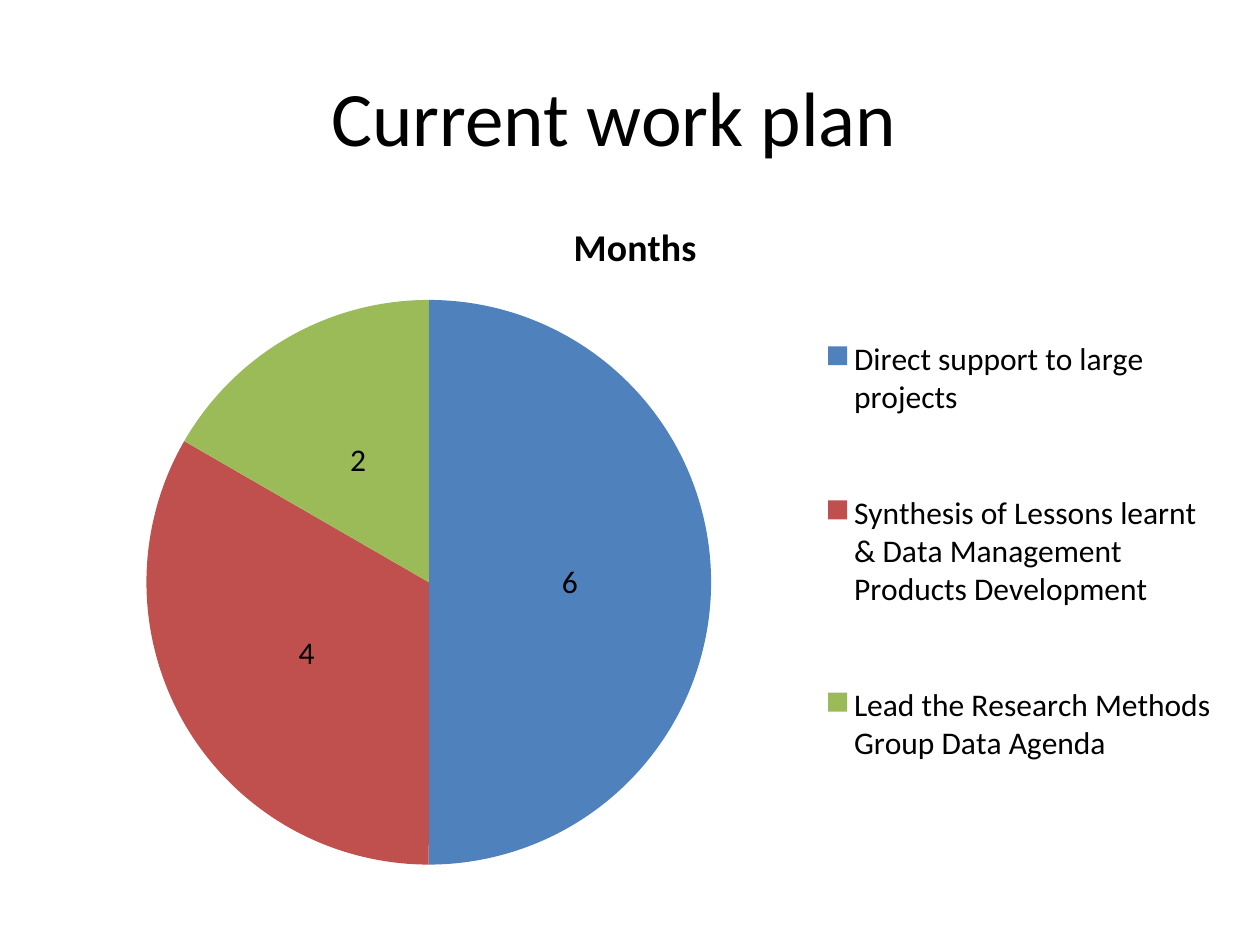
from lxml import etree
from pptx import Presentation, util as u
from pptx.chart.data import CategoryChartData
from pptx.dml.color import RGBColor
from pptx.enum import chart as ch, text
from pptx.oxml import parse_xml
from pptx.oxml.ns import nsdecls, qn

FONT = "Calibri"
BLACK = RGBColor(0x00, 0x00, 0x00)
BLUE = RGBColor(0x4F, 0x81, 0xBD)
RED = RGBColor(0xC0, 0x50, 0x4D)
GREEN = RGBColor(0x9B, 0xBB, 0x59)
COLUMNS, ROWS = 120, 90

WORK_PLAN = [
    ("Direct support to large projects", 6, BLUE),
    ("Synthesis of Lessons learnt & Data Management Products Development", 4, RED),
    ("Lead the Research Methods Group Data Agenda", 2, GREEN),
]


def set_font(font, size, bold=False):
    """Apply the slide's typeface and text colour at the given size."""
    font.name, font.size, font.bold = FONT, u.Pt(size), bold
    font.color.rgb = BLACK


def grid_box(prs, left, top, width, height):
    """Turn grid columns and rows into a box in EMU."""
    col, row = prs.slide_width / COLUMNS, prs.slide_height / ROWS
    return int(left * col), int(top * row), int(width * col), int(height * row)


def set_layout(parent, after, settings, percents):
    """Give a chart part a manual layout in per cent of the chart's size."""
    for old in parent.findall(qn("c:layout")):
        parent.remove(old)
    layout = parse_xml(f"<c:layout {nsdecls('c')}><c:manualLayout/></c:layout>")
    settings = settings + [("xMode", "edge"), ("yMode", "edge")]
    settings += [(tag, share / 100) for tag, share in zip("xywh", percents)]
    for tag, val in settings:
        etree.SubElement(layout[0], qn(f"c:{tag}")).set("val", str(val))
    parent.insert(after, layout)


def add_title(s, box, title):
    """Place and format the slide's title placeholder."""
    sp = s.shapes.title
    sp.left, sp.top, sp.width, sp.height = box
    tf = sp.text_frame
    tf.text = title
    tf.word_wrap = True
    tf.vertical_anchor = text.MSO_ANCHOR.MIDDLE
    p = tf.paragraphs[0]
    p.alignment = text.PP_ALIGN.CENTER
    set_font(p.font, 44)


def add_pie(s, box, name, rows):
    """Add the pie chart with its title, value labels and legend."""
    labels, values, colors = zip(*rows)
    data = CategoryChartData(number_format="General")
    data.categories = labels
    data.add_series(name, values)
    chart = s.shapes.add_chart(ch.XL_CHART_TYPE.PIE, *box, data).chart
    set_font(chart.font, 18)

    chart.has_title = True
    chart.chart_title.include_in_layout = False
    tf = chart.chart_title.text_frame
    tf.text = name
    set_font(tf.paragraphs[0].font, 21.6, bold=True)

    plot = chart.plots[0]
    plot.vary_by_categories = True
    for i, color in enumerate(colors):
        fill = plot.series[0].points[i].format.fill
        fill.solid()
        fill.fore_color.rgb = color
    plot.has_data_labels = True
    plot.data_labels.show_value = True
    plot.data_labels.show_percentage = False
    plot.data_labels.position = ch.XL_LABEL_POSITION.CENTER
    set_font(plot.data_labels.font, 18)

    chart.has_legend = True
    legend = chart.legend
    legend.position = ch.XL_LEGEND_POSITION.RIGHT
    legend.include_in_layout = False
    set_font(legend.font, 18)

    area = chart.element.find(f".//{qn('c:plotArea')}")
    set_layout(area, 0, [("layoutTarget", "inner")], (8.8, 15.5, 47.6, 82))
    key = chart.element.find(f".//{qn('c:legend')}")
    set_layout(key, 1, [], (66.2, 10, 33, 84))


def main():
    """Build and save the work plan slide."""
    prs = Presentation()
    prs.slide_width, prs.slide_height = u.Inches(10), u.Inches(7.5)
    s = prs.slides.add_slide(prs.slide_layouts[5])
    add_title(s, grid_box(prs, 18, 6, 81, 10), "Current work plan")
    add_pie(s, grid_box(prs, 4, 18.4, 113, 65.6), "Months", WORK_PLAN)
    prs.save("out.pptx")


if __name__ == "__main__":
    main()
